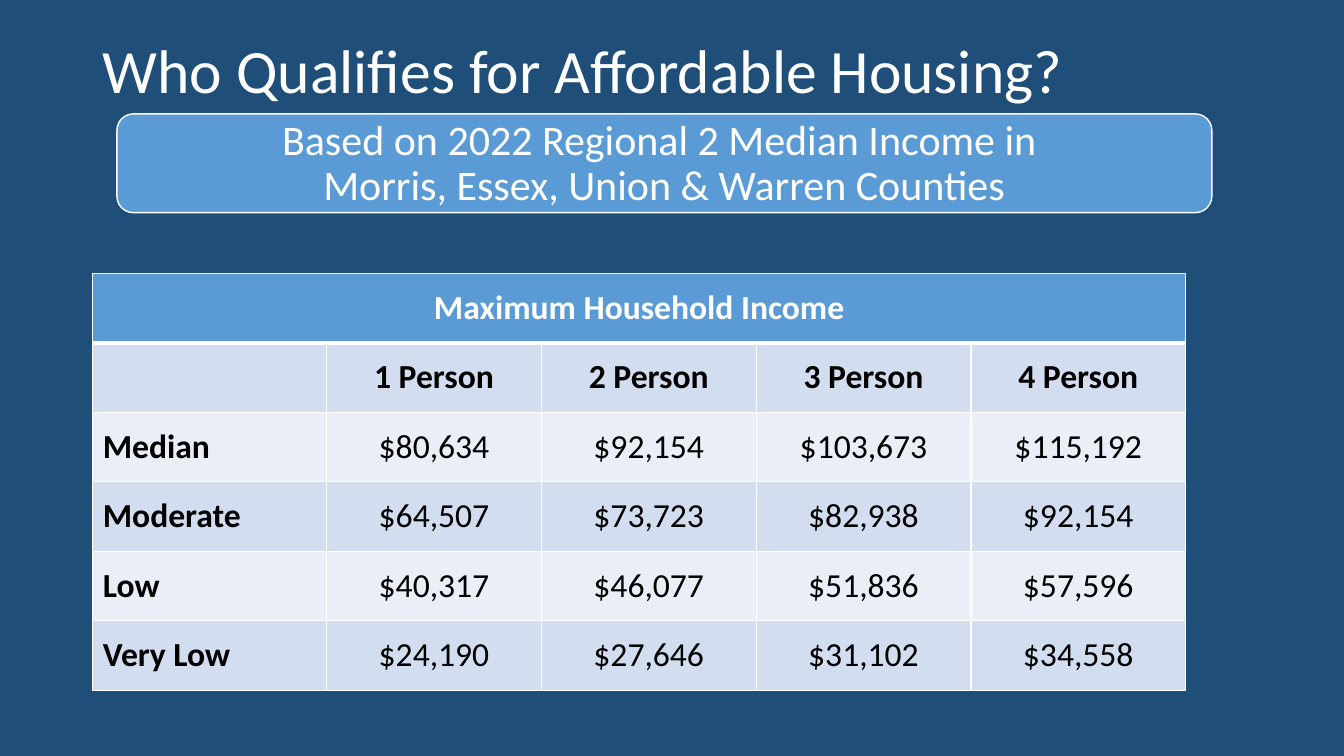
from lxml.etree import SubElement
from pptx import Presentation
from pptx.dml.color import RGBColor
from pptx.enum.shapes import MSO_SHAPE as Shape
from pptx.enum.text import MSO_ANCHOR as Anchor, MSO_AUTO_SIZE as AutoSize, PP_ALIGN as Align
from pptx.oxml.ns import qn
from pptx.util import Inches, Pt

NAVY = RGBColor(0x1F, 0x4E, 0x79)
BLUE = RGBColor(0x5B, 0x9B, 0xD5)
BAND_DARK = RGBColor(0xD2, 0xDE, 0xEF)
BAND_LIGHT = RGBColor(0xEA, 0xEF, 0xF7)
WHITE = RGBColor(0xFF, 0xFF, 0xFF)
BLACK = RGBColor(0x00, 0x00, 0x00)
FONT = "Calibri"

TABLE_HEADING = "Maximum Household Income"
INCOME_ROWS = [
    ("", "1 Person", "2 Person", "3 Person", "4 Person"),
    ("Median", "$80,634", "$92,154", "$103,673", "$115,192"),
    ("Moderate", "$64,507", "$73,723", "$82,938", "$92,154"),
    ("Low", "$40,317", "$46,077", "$51,836", "$57,596"),
    ("Very Low", "$24,190", "$27,646", "$31,102", "$34,558"),
]
COLUMN_WIDTHS = [2.32] + [2.13] * 4
ROW_HEIGHT = 0.69


def write_text(frame, text, size, color=WHITE, bold=False, align=Align.CENTER, spacing=None):
    for index, line in enumerate(text.split("\n")):
        para = frame.paragraphs[0] if index == 0 else frame.add_paragraph()
        para.alignment = align
        para.line_spacing = spacing
        span = para.add_run()
        span.text = line
        span.font.name = FONT
        span.font.size = Pt(size)
        span.font.bold = bold
        span.font.color.rgb = color


def add_title(page, text):
    title = page.shapes.title
    title.left, title.top = Inches(0.92), Inches(0)
    title.width, title.height = Inches(11.5), Inches(1.45)
    frame = title.text_frame
    frame.auto_size = AutoSize.NONE
    frame.vertical_anchor = Anchor.MIDDLE
    write_text(frame, text, 44, align=Align.LEFT, spacing=0.9)


def add_banner(page, text):
    box = page.shapes.add_shape(
        Shape.ROUNDED_RECTANGLE, Inches(1.16), Inches(1.13), Inches(10.86), Inches(0.98))
    box.shadow.inherit = False
    box.fill.solid()
    box.fill.fore_color.rgb = BLUE
    box.line.color.rgb = WHITE
    box.line.width = Pt(1)
    frame = box.text_frame
    frame.word_wrap = True
    frame.vertical_anchor = Anchor.MIDDLE
    frame.margin_left = frame.margin_right = frame.margin_top = Inches(0.12)
    frame.margin_bottom = Inches(0.1)
    write_text(frame, text, 30, spacing=0.9)


def set_borders(cell, **widths):
    properties = cell._tc.get_or_add_tcPr()
    for side in ("L", "R", "T", "B"):
        line = SubElement(properties, qn(f"a:ln{side}"), w=str(Pt(widths.get(side, 1))))
        fill = SubElement(line, qn("a:solidFill"))
        SubElement(fill, qn("a:srgbClr"), val=str(WHITE))


def format_cell(cell, color, **widths):
    set_borders(cell, **widths)
    cell.fill.solid()
    cell.fill.fore_color.rgb = color
    cell.vertical_anchor = Anchor.MIDDLE


def add_income_table(page):
    row_count = len(INCOME_ROWS) + 1
    table = page.shapes.add_table(
        row_count, len(COLUMN_WIDTHS), Inches(0.92), Inches(2.71),
        Inches(sum(COLUMN_WIDTHS)), Inches(ROW_HEIGHT * row_count)).table
    for column, width in zip(table.columns, COLUMN_WIDTHS):
        column.width = Inches(width)
    for row in table.rows:
        row.height = Inches(ROW_HEIGHT)

    for cell in table.rows[0].cells:
        format_cell(cell, BLUE, B=3)
    heading = table.cell(0, 0)
    heading.merge(table.cell(0, len(COLUMN_WIDTHS) - 1))
    write_text(heading.text_frame, TABLE_HEADING, 24, bold=True)

    for row, values in enumerate(INCOME_ROWS, start=1):
        for column, value in enumerate(values):
            cell = table.cell(row, column)
            format_cell(cell, BAND_DARK if row % 2 else BAND_LIGHT, T=3 if row == 1 else 1)
            if value:
                write_text(cell.text_frame, value, 24, color=BLACK,
                           bold=row == 1 or column == 0,
                           align=Align.CENTER if column else Align.LEFT)


def main():
    deck = Presentation()
    deck.slide_width, deck.slide_height = Inches(13.33), Inches(7.5)
    page = deck.slides.add_slide(deck.slide_layouts[5])
    page.background.fill.solid()
    page.background.fill.fore_color.rgb = NAVY
    add_title(page, "Who Qualifies for Affordable Housing?")
    add_banner(page, "Based on 2022 Regional 2 Median Income in \n"
                     "Morris, Essex, Union & Warren Counties")
    add_income_table(page)
    deck.save("out.pptx")


if __name__ == "__main__":
    main()
